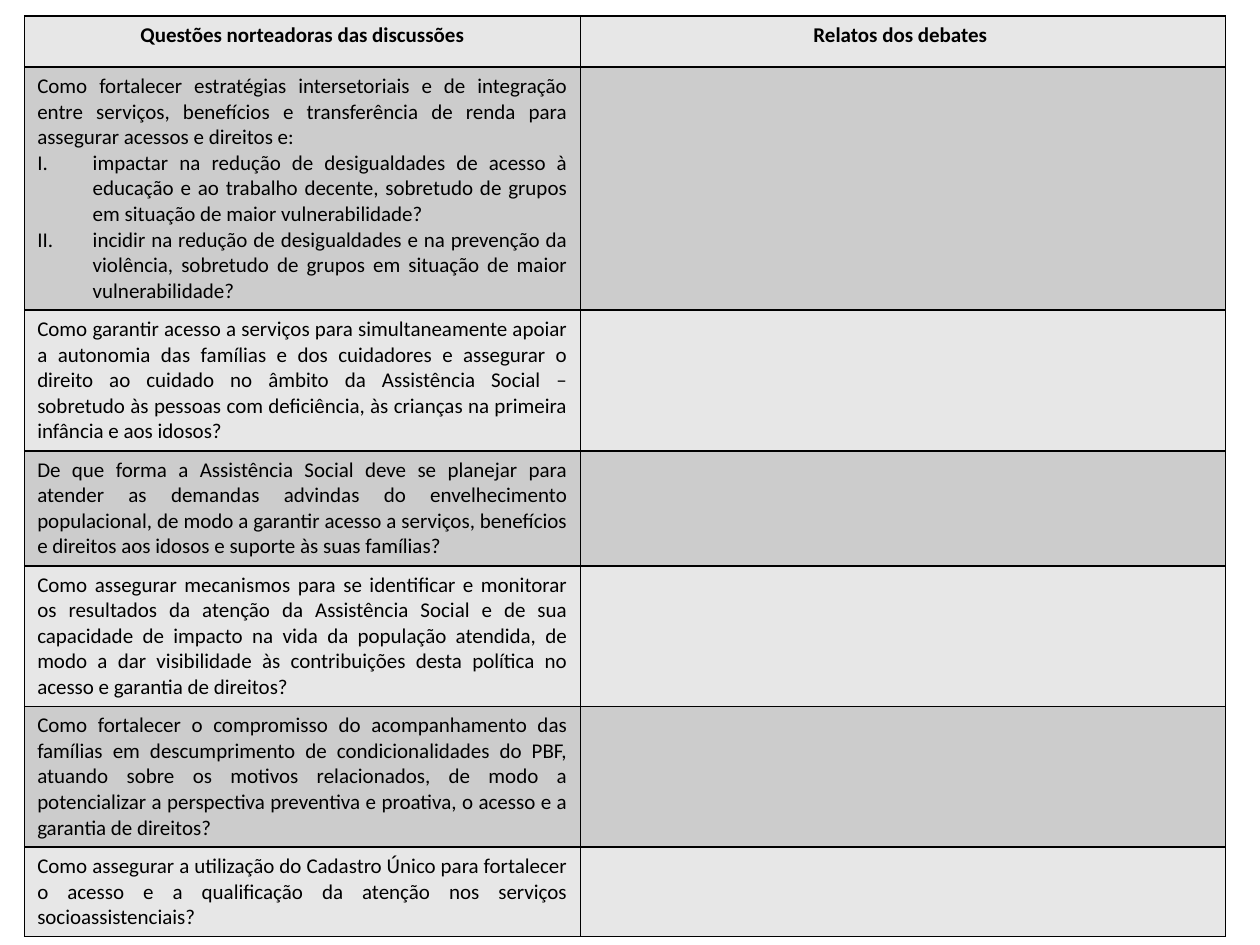
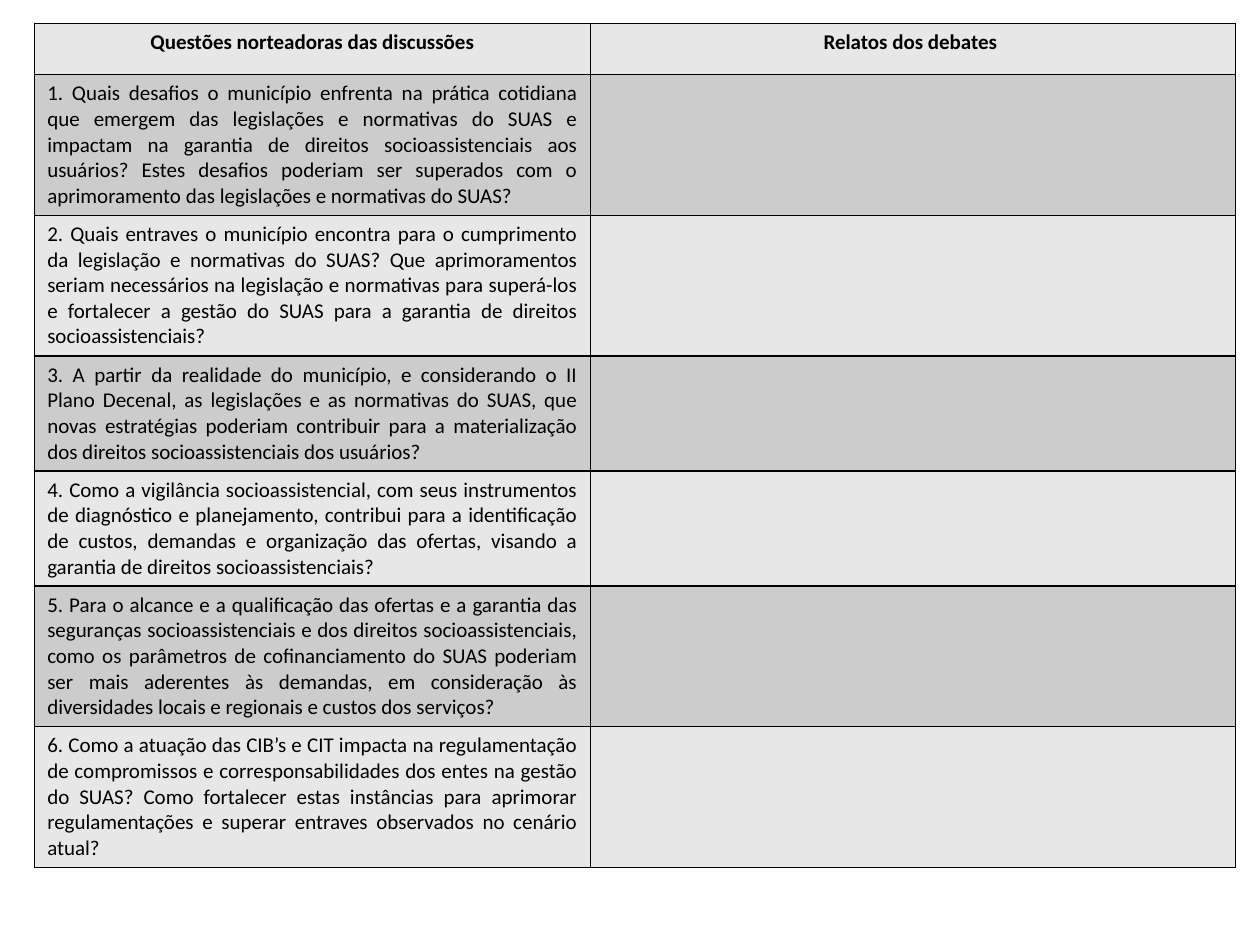
from dataclasses import dataclass

from lxml.etree import SubElement
from pptx import Presentation
from pptx.dml.color import RGBColor as Rgb
from pptx.enum.text import PP_ALIGN as Align
from pptx.oxml.ns import qn
from pptx.util import Pt

COLORS = {"text": "000000", "line": "000000", "light": "E7E7E7", "dark": "CCCCCC"}
FONT = "Calibri"
SIZE = Pt(12)
HEADS = ("Questões norteadoras das discussões", "Relatos dos debates ")
WIDTHS = (317.5, 368.6)
ROW = 29.2
INDENT = Pt(31.7)


@dataclass
class Query:
    text: str
    items: tuple[str, ...] = ()


@dataclass
class Sheet:
    left: float
    top: float
    height: float
    queries: list[Query]


SHEETS = [
    Sheet(14.1, 9.2, 519, [
        Query(
            "Como fortalecer estratégias intersetoriais e de integração entre serviços, "
            "benefícios e transferência de renda para assegurar acessos e direitos e: ",
            (
                "impactar na redução de desigualdades de acesso à educação e ao trabalho "
                "decente, sobretudo de grupos em situação de maior vulnerabilidade? ",
                "incidir na redução de desigualdades e na prevenção da violência, "
                "sobretudo de grupos em situação de maior vulnerabilidade?",
            )),
        Query(
            "Como garantir acesso a serviços para simultaneamente apoiar a autonomia das "
            "famílias e dos cuidadores e assegurar o direito ao cuidado no âmbito da "
            "Assistência Social – sobretudo às pessoas com deficiência, às crianças na "
            "primeira infância e aos idosos?"),
        Query(
            "De que forma a Assistência Social deve se planejar para atender as demandas "
            "advindas do envelhecimento populacional, de modo a garantir acesso a "
            "serviços, benefícios e direitos aos idosos e suporte às suas famílias?"),
        Query(
            "Como assegurar mecanismos para se identificar e monitorar os resultados da "
            "atenção da Assistência Social e de sua capacidade de impacto na vida da "
            "população atendida, de modo a dar visibilidade às contribuições desta "
            "política no acesso e garantia de direitos?"),
        Query(
            "Como fortalecer o compromisso do acompanhamento das famílias em "
            "descumprimento de condicionalidades do PBF, atuando sobre os motivos "
            "relacionados, de modo a potencializar a perspectiva preventiva e proativa, "
            "o acesso e a garantia de direitos?"),
        Query(
            "Como assegurar a utilização do Cadastro Único para fortalecer o acesso e a "
            "qualificação da atenção nos serviços socioassistenciais?"),
    ]),
    Sheet(19.8, 13.5, 476, [
        Query(
            "1. Quais desafios o município enfrenta na prática cotidiana que emergem das "
            "legislações e normativas do SUAS e impactam na garantia de direitos "
            "socioassistenciais aos usuários? Estes desafios poderiam ser superados com "
            "o aprimoramento das legislações e normativas do SUAS?"),
        Query(
            "2. Quais entraves o município encontra para o cumprimento da legislação e "
            "normativas do SUAS? Que aprimoramentos seriam necessários na legislação e "
            "normativas para superá-los e fortalecer a gestão do SUAS para a garantia de "
            "direitos socioassistenciais?"),
        Query(
            "3. A partir da realidade do município, e considerando o II Plano Decenal, "
            "as legislações e as normativas do SUAS, que novas estratégias poderiam "
            "contribuir para a materialização dos direitos socioassistenciais dos "
            "usuários?"),
        Query(
            "4. Como a vigilância socioassistencial, com seus instrumentos de "
            "diagnóstico e planejamento, contribui para a identificação de custos, "
            "demandas e organização das ofertas, visando a garantia de direitos "
            "socioassistenciais?"),
        Query(
            "5. Para o alcance e a qualificação das ofertas e a garantia das seguranças "
            "socioassistenciais e dos direitos socioassistenciais, como os parâmetros de "
            "cofinanciamento do SUAS poderiam ser mais aderentes às demandas, em "
            "consideração às diversidades locais e regionais e custos dos serviços?"),
        Query(
            "6. Como a atuação das CIB’s e CIT impacta na regulamentação de compromissos "
            "e corresponsabilidades dos entes na gestão do SUAS? Como fortalecer estas "
            "instâncias para aprimorar regulamentações e superar entraves observados no "
            "cenário atual?"),
    ]),
]


def add_frame(cell) -> None:
    """Draw a thin line on all four sides of the cell."""
    props = cell._tc.get_or_add_tcPr()
    for spot, side in enumerate(("lnL", "lnR", "lnT", "lnB")):
        line = SubElement(props, qn(f"a:{side}"), w=str(Pt(1)))
        fill = SubElement(line, qn("a:solidFill"))
        SubElement(fill, qn("a:srgbClr"), val=COLORS["line"])
        props.insert(spot, line)  # borders come before the fill


def style_cell(cell, shade: str) -> None:
    cell.fill.solid()
    cell.fill.fore_color.rgb = Rgb.from_string(COLORS[shade])
    add_frame(cell)


def style_text(para, align: Align, bold: bool = False) -> None:
    para.alignment = align
    for run in para.runs:
        font = run.font
        font.name, font.size, font.bold = FONT, SIZE, bold
        font.color.rgb = Rgb.from_string(COLORS["text"])


def add_roman(para) -> None:
    """Number the paragraph I., II. with a hanging indent."""
    props = para._p.get_or_add_pPr()
    props.set("marL", str(INDENT))
    props.set("indent", str(-INDENT))
    SubElement(props, qn("a:buFont"), typeface="+mj-lt")
    SubElement(props, qn("a:buAutoNum"), type="romanUcPeriod")


def fill_query(cell, query: Query) -> None:
    frame = cell.text_frame
    frame.text = query.text
    for item in query.items:
        para = frame.add_paragraph()
        para.text = item
        add_roman(para)
    for para in frame.paragraphs:
        style_text(para, Align.JUSTIFY)


def add_sheet(deck, sheet: Sheet) -> None:
    slide = deck.slides.add_slide(deck.slide_layouts[6])
    count = len(sheet.queries) + 1
    holder = slide.shapes.add_table(
        count, len(HEADS), Pt(sheet.left), Pt(sheet.top), Pt(sum(WIDTHS)), Pt(ROW * count))
    holder.height = Pt(sheet.height)
    table = holder.table
    table.first_row = table.horz_banding = False
    for col, width in zip(table.columns, WIDTHS):
        col.width = Pt(width)
    for index, row in enumerate(table.rows):
        for cell in row.cells:
            style_cell(cell, "dark" if index % 2 else "light")
    for cell, head in zip(table.rows[0].cells, HEADS):
        cell.text_frame.text = head
        style_text(cell.text_frame.paragraphs[0], Align.CENTER, bold=True)
    for index, query in enumerate(sheet.queries, 1):
        fill_query(table.cell(index, 0), query)


def main() -> None:
    deck = Presentation()
    deck.slide_width, deck.slide_height = Pt(720), Pt(540)
    for sheet in SHEETS:
        add_sheet(deck, sheet)
    deck.save("out.pptx")


if __name__ == "__main__":
    main()
